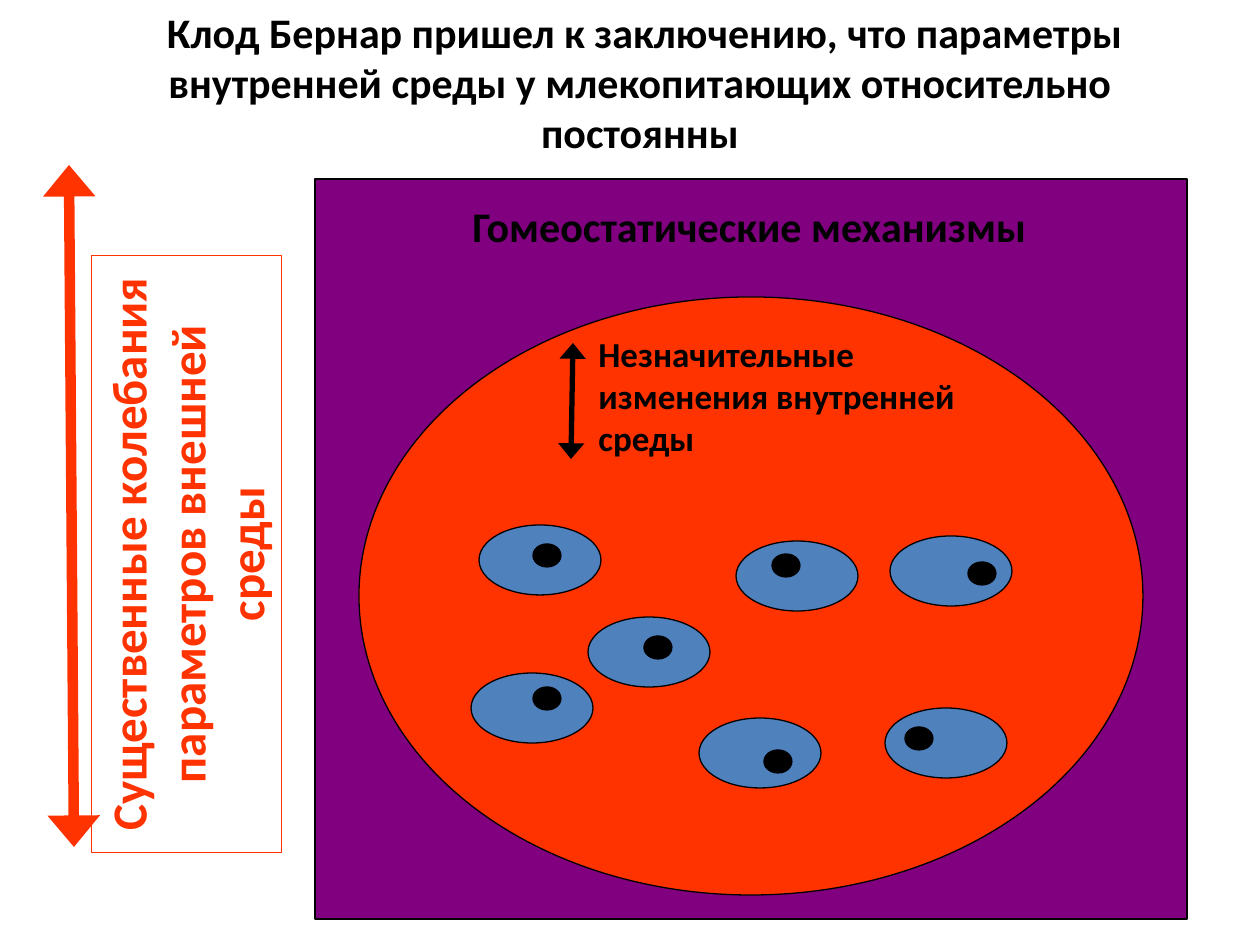
from dataclasses import dataclass
from lxml.etree import SubElement
from pptx import Presentation
from pptx.dml.color import RGBColor
from pptx.enum.shapes import MSO_CONNECTOR, MSO_SHAPE
from pptx.enum.text import MSO_ANCHOR, PP_ALIGN
from pptx.oxml.ns import qn
from pptx.util import Pt


@dataclass
class Theme:
    font: str = "Calibri"
    black: RGBColor = RGBColor(0, 0, 0)
    red: RGBColor = RGBColor(0xFF, 0x33, 0)
    purple: RGBColor = RGBColor(0x80, 0, 0x80)
    blue: RGBColor = RGBColor(0x4F, 0x81, 0xBD)
    thin: float = 0.75
    small: int = 20
    head: int = 24
    large: int = 28


theme = Theme()
PX = 914400 / 126  # EMU in one px


def emu(*nums):
    return [round(n * PX) for n in nums]


def write(shape, text, size=theme.head, color=theme.black, align=PP_ALIGN.LEFT, wrap=True):
    frame = shape.text_frame
    frame.word_wrap = wrap
    frame.vertical_anchor = MSO_ANCHOR.TOP
    para = frame.paragraphs[0]
    para.alignment = align
    run = para.add_run()
    run.text = text
    font = run.font
    font.name, font.size, font.bold = theme.font, Pt(size), True
    font.color.rgb = color


deck = Presentation()
deck.slide_width, deck.slide_height = emu(1260, 945)
slide = deck.slides.add_slide(deck.slide_layouts[6])
shapes = slide.shapes

# Body, inner medium, then each cell with its nucleus
RECT, OVAL = MSO_SHAPE.RECTANGLE, MSO_SHAPE.OVAL
parts = [
    (RECT, 315, 179, 872, 740, theme.purple),
    (OVAL, 359, 297, 784, 598, theme.red),
]
cells = [
    (479, 525, 533, 544),
    (471, 673, 533, 687),
    (699, 718, 764, 750),
    (736, 541, 772, 554),
    (885, 708, 905, 727),
    (890, 536, 968, 562),
    (588, 617, 644, 636),
]
for x, y, dotx, doty in cells:
    parts.append((OVAL, x, y, 122, 70, theme.blue))
    parts.append((OVAL, dotx, doty, 28, 23, theme.black))
for kind, x, y, w, h, fill in parts:
    shape = shapes.add_shape(kind, *emu(x, y, w, h))
    shape.shadow.inherit = False
    shape.fill.solid()
    shape.fill.fore_color.rgb = fill
    shape.line.color.rgb = theme.black
    shape.line.width = Pt(theme.thin)

# Double arrows: small inner change, large outer swing
arrows = [
    (573, 343, 571, 459, theme.black, 3),
    (69, 165, 74, 847, theme.red, 6),
]
for x1, y1, x2, y2, color, width in arrows:
    arrow = shapes.add_connector(MSO_CONNECTOR.STRAIGHT, *emu(x1, y1, x2, y2))
    arrow.line.color.rgb = color
    arrow.line.width = Pt(width)
    line = arrow.line._get_or_add_ln()
    for end in ("a:headEnd", "a:tailEnd"):
        SubElement(line, qn(end), type="triangle", w="lg", len="med")
    SubElement(line.getparent(), qn("a:effectLst"))

# Outer medium label, turned to read upwards
side = shapes.add_shape(RECT, *emu(-112, 459, 597, 190))
side.rotation = 270
side.shadow.inherit = False
side.fill.background()
side.line.color.rgb = theme.red
side.line.width = Pt(theme.thin)
write(side, "Существенные колебания параметров внешней среды",
      size=theme.large, color=theme.red, align=PP_ALIGN.CENTER)

# Title and labels
title = shapes.add_textbox(*emu(53, 0, 1174, 164))
write(title, " Клод Бернар пришел к заключению, что параметры внутренней среды "
      "у млекопитающих относительно постоянны", align=PP_ALIGN.CENTER)
label = shapes.add_textbox(*emu(460, 194, 662, 63))
write(label, "Гомеостатические механизмы", wrap=False)
note = shapes.add_textbox(*emu(586, 326, 407, 139))
write(note, "Незначительные изменения внутренней среды", size=theme.small)

deck.save("out.pptx")
